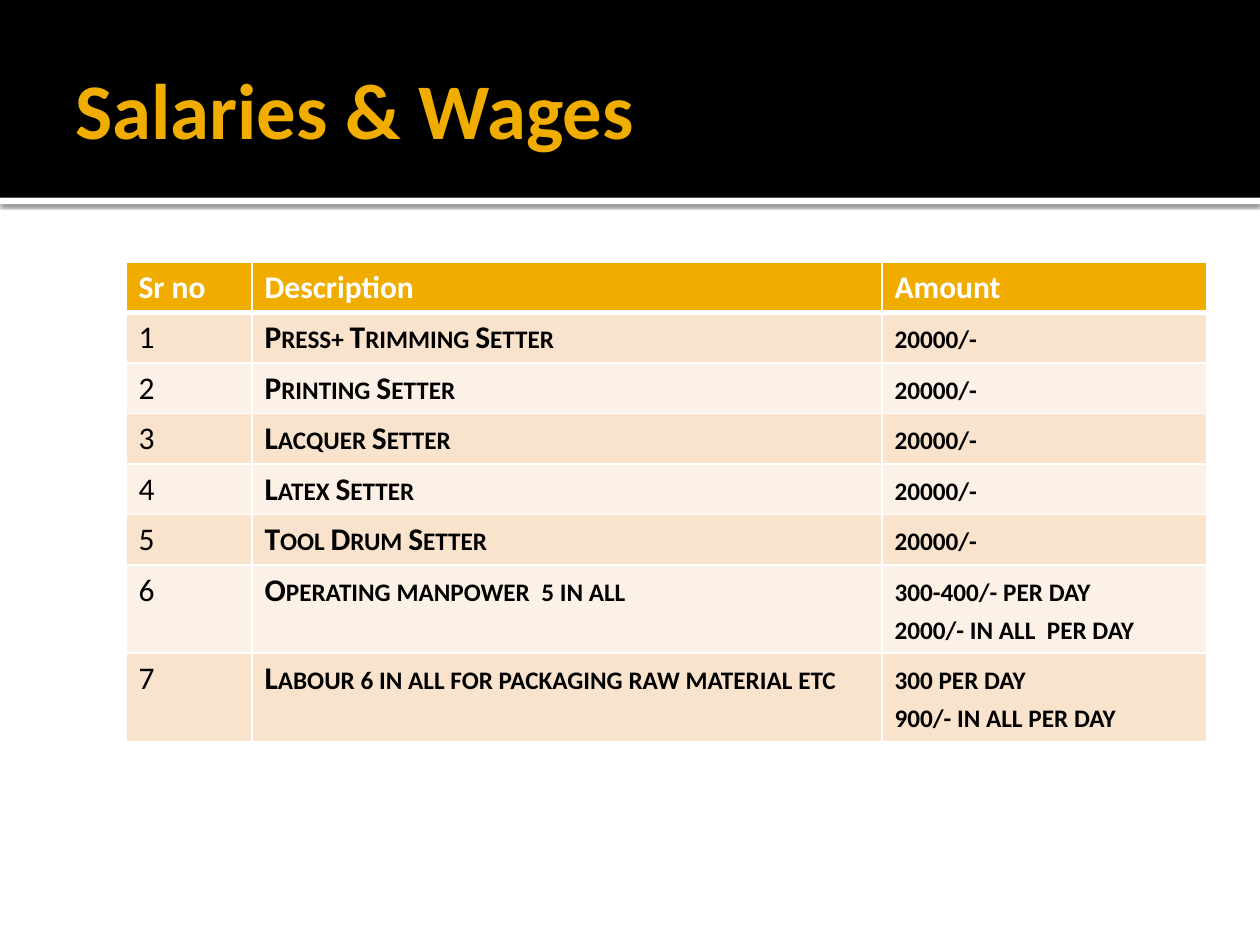
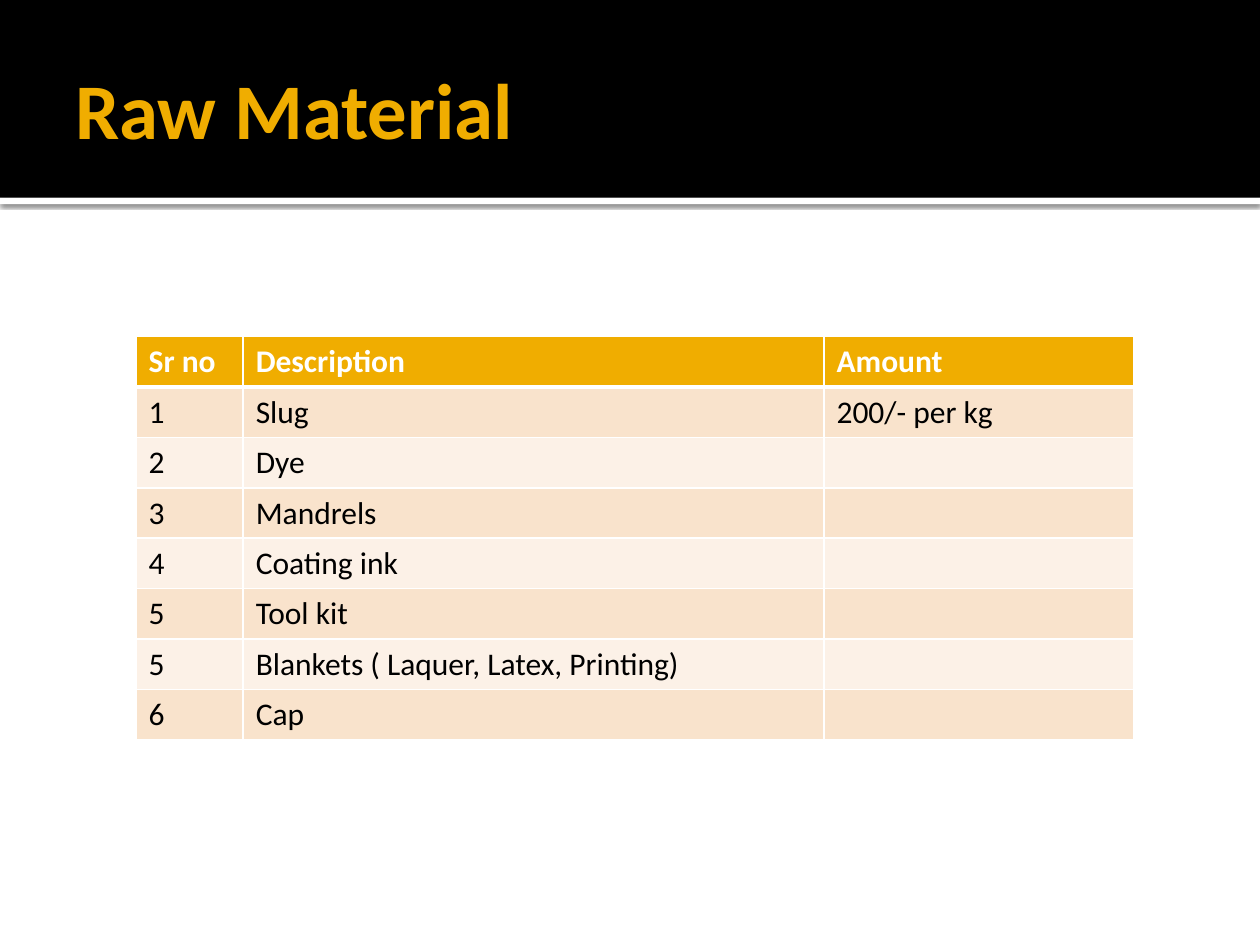
"""Build the salaries and raw material slides."""
import dataclasses

import lxml.etree
import pptx
import pptx.dml.color
import pptx.enum.shapes
import pptx.enum.text
import pptx.oxml.ns
import pptx.util

Inches = pptx.util.Inches


@dataclasses.dataclass(frozen=True)
class Theme:
    """Colours, font and type sizes shared by the slides."""
    font: str = "Calibri"
    accent: str = "F0AD00"
    dark: str = "000000"
    light: str = "FFFFFF"
    row_fills: tuple = ("F9E3CC", "FCF1E7")
    title_size: int = 45
    table_size: int = 18
    border: float = 1
    header_border: float = 3


THEME = Theme()
HEADER = ("Sr no", "Description", "Amount")
SALARIES = (
    ("1", "Press+ Trimming Setter", "20000/-"),
    ("2", "Printing Setter", "20000/-"),
    ("3", "Lacquer Setter", "20000/-"),
    ("4", "Latex Setter", "20000/-"),
    ("5", "Tool Drum Setter", "20000/-"),
    ("6", "Operating manpower  5 in all", "300-400/- per day\n2000/- in all  per day"),
    ("7", "Labour 6 in all for packaging raw material etc", "300 per day\n900/- in all per day"),
)
MATERIALS = (
    ("1", "Slug", "200/- per kg"),
    ("2", "Dye", ""),
    ("3", "Mandrels", ""),
    ("4", "Coating ink", ""),
    ("5", "Tool kit", ""),
    ("5", "Blankets ( Laquer, Latex, Printing)", ""),
    ("6", "Cap", ""),
)


def rgb(colour):
    """Turn a hex string into a colour."""
    return pptx.dml.color.RGBColor.from_string(colour)


def add_child(parent, tag, **attributes):
    """Append a drawing element and return it."""
    child = lxml.etree.SubElement(parent, pptx.oxml.ns.qn(tag))
    for name, value in attributes.items():
        child.set(name, str(value))
    return child


def style_text(text_frame, size, colour, bold, small_caps=False):
    """Format every run of a text frame."""
    for paragraph in text_frame.paragraphs:
        for run in paragraph.runs:
            run.font.name = THEME.font
            run.font.size = pptx.util.Pt(size)
            run.font.bold = bold
            run.font.color.rgb = rgb(colour)
            if small_caps:
                run.font._element.set("cap", "small")


def add_band(slide, top, height, colour):
    """Add a borderless band across the slide."""
    band = slide.shapes.add_shape(
        pptx.enum.shapes.MSO_SHAPE.RECTANGLE, 0, Inches(top), Inches(10), Inches(height))
    band.shadow.inherit = False
    band.fill.solid()
    band.fill.fore_color.rgb = rgb(colour)
    band.line.fill.background()
    return band


def add_shadow(shape):
    """Cast a soft shadow below a shape."""
    effects = shape._element.spPr.find(pptx.oxml.ns.qn("a:effectLst"))
    shadow = add_child(effects, "a:outerShdw", blurRad=pptx.util.Pt(2.5),
                       dist=pptx.util.Pt(0.8), dir=90 * 60000, algn="tl", rotWithShape=0)
    colour = add_child(shadow, "a:srgbClr", val=THEME.dark)
    add_child(colour, "a:alpha", val=60000)


def add_title(slide, text):
    """Add the slide title on the dark band."""
    box = slide.shapes.add_textbox(Inches(0.5), Inches(0.17), Inches(9), Inches(1.37))
    frame = box.text_frame
    frame.word_wrap = True
    frame.vertical_anchor = pptx.enum.text.MSO_ANCHOR.MIDDLE
    frame.margin_left = Inches(0.1)
    frame.margin_top = frame.margin_right = frame.margin_bottom = Inches(0.05)
    frame.text = text
    style_text(frame, THEME.title_size, THEME.accent, True)


def add_titled_slide(presentation, title):
    """Add a blank slide with the shared bands and a title."""
    slide = presentation.slides.add_slide(presentation.slide_layouts[6])
    add_shadow(add_band(slide, 1.57, 0.05, THEME.light))
    add_band(slide, 0, 1.57, THEME.dark)
    add_title(slide, title)
    return slide


def set_borders(cell, row_index):
    """Draw the cell borders, heavier under the header row."""
    widths = dict.fromkeys(("a:lnL", "a:lnR", "a:lnT", "a:lnB"), THEME.border)
    if row_index == 0:
        widths["a:lnB"] = THEME.header_border
    elif row_index == 1:
        widths["a:lnT"] = THEME.header_border
    properties = cell._tc.get_or_add_tcPr()
    for position, (tag, width) in enumerate(widths.items()):
        line = add_child(properties, tag, w=pptx.util.Pt(width))
        add_child(add_child(line, "a:solidFill"), "a:srgbClr", val=THEME.light)
        properties.insert(position, line)


def fill_cell(cell, text, row_index, emphasised):
    """Write and format one table cell."""
    is_header = row_index == 0
    cell.text = text
    cell.fill.solid()
    cell.fill.fore_color.rgb = rgb(
        THEME.accent if is_header else THEME.row_fills[(row_index - 1) % 2])
    style_text(cell.text_frame, THEME.table_size, THEME.light if is_header else THEME.dark,
               is_header or emphasised, emphasised)
    set_borders(cell, row_index)


def add_price_table(slide, left, top, column_widths, items, emphasised=False):
    """Add a numbered table, with bold small caps if emphasised."""
    rows = (HEADER, *items)
    heights = [0.7 if "\n" in row[-1] else 0.4 for row in rows]
    table = slide.shapes.add_table(
        len(rows), len(HEADER), Inches(left), Inches(top),
        Inches(sum(column_widths)), Inches(sum(heights))).table
    table.horz_banding = False
    for column, width in zip(table.columns, column_widths):
        column.width = Inches(width)
    for row_index, (row, height) in enumerate(zip(rows, heights)):
        table.rows[row_index].height = Inches(height)
        for column_index, text in enumerate(row):
            fill_cell(table.cell(row_index, column_index), text, row_index,
                      emphasised and row_index > 0 and column_index > 0)


def main():
    """Build and save the presentation."""
    presentation = pptx.Presentation()
    presentation.slide_width = Inches(10)
    presentation.slide_height = Inches(7.5)

    salaries = add_titled_slide(presentation, "Salaries & Wages")
    add_price_table(salaries, 1, 2.08, (1, 5, 2.58), SALARIES, emphasised=True)

    materials = add_titled_slide(presentation, "Raw Material")
    add_price_table(materials, 1.08, 2.67, (0.85, 4.61, 2.46), MATERIALS)

    presentation.save("out.pptx")


if __name__ == "__main__":
    main()
